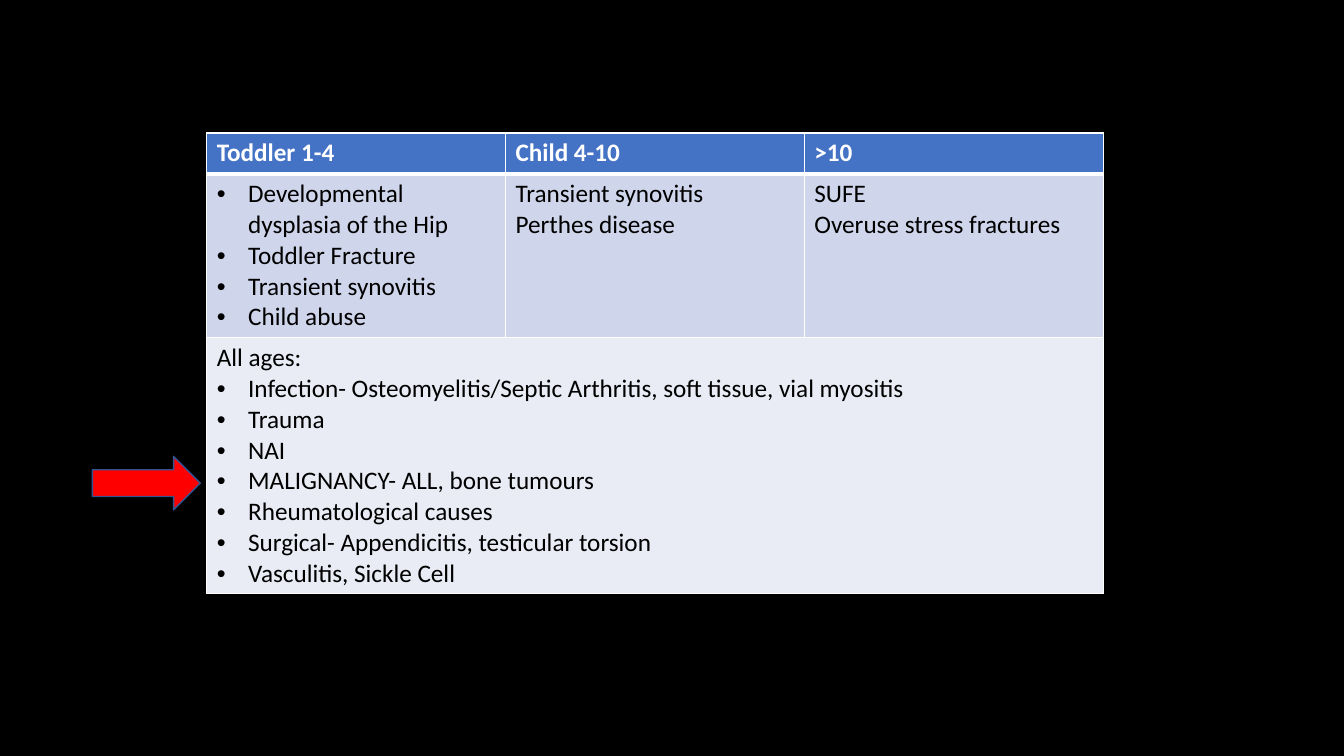
from lxml import etree
from pptx import Presentation
from pptx.dml.color import RGBColor
from pptx.enum.shapes import MSO_SHAPE
from pptx.oxml.ns import qn
from pptx.util import Cm, Pt

RIGHT_ARROW = MSO_SHAPE.RIGHT_ARROW

# Content: lines starting with the bullet mark become bulleted paragraphs
BULLET = "•"
AGE_GROUPS = ["Toddler 1-4", "Child 4-10", ">10"]
CAUSES_BY_AGE = [
    ["•Developmental dysplasia of the Hip", "•Toddler Fracture",
     "•Transient synovitis", "•Child abuse"],
    ["Transient synovitis", "Perthes disease"],
    ["SUFE", "Overuse stress fractures"],
]
CAUSES_ALL_AGES = [
    "All ages:",
    "•Infection- Osteomyelitis/Septic Arthritis, soft tissue, vial myositis",
    "•Trauma",
    "•NAI",
    "•MALIGNANCY- ALL, bone tumours",
    "•Rheumatological causes",
    "•Surgical- Appendicitis, testicular torsion",
    "•Vasculitis, Sickle Cell",
]

# Layout and colours
TABLE_LEFT, TABLE_TOP = 5.21, 3.35
COLUMN_WIDTH = 7.53
ROW_HEIGHTS = [1.03, 4.1, 6.4]
ROW_FILLS = ["4472C4", "CFD5EA", "E9EBF5"]
THIN, THICK = 1, 3
BULLET_INDENT = Cm(0.79)
WHITE, BLACK, RED, ARROW_EDGE = "FFFFFF", "000000", "FF0000", "325491"


def rgb(value):
    return RGBColor.from_string(value)


def paint(fill, color):
    fill.solid()
    fill.fore_color.rgb = rgb(color)


def write(frame, lines, size=18, font="Calibri", color=BLACK, bold=False):
    for index, line in enumerate(lines):
        paragraph = frame.add_paragraph() if index else frame.paragraphs[0]
        if line.startswith(BULLET):
            properties = paragraph._p.get_or_add_pPr()
            properties.set("marL", str(BULLET_INDENT))
            properties.set("indent", str(-BULLET_INDENT))
            etree.SubElement(properties, qn("a:buFont"), typeface="Arial")
            etree.SubElement(properties, qn("a:buChar"), char=BULLET)
        run = paragraph.add_run()
        run.text = line.removeprefix(BULLET)
        run.font.size = Pt(size)
        run.font.name = font
        run.font.bold = bold
        run.font.color.rgb = rgb(color)


def set_borders(cell, **widths):
    properties = cell._tc.get_or_add_tcPr()
    for side in "LRTB":
        width = Pt(widths.get(side, THIN))
        border = etree.SubElement(properties, qn(f"a:ln{side}"), w=str(width))
        solid = etree.SubElement(border, qn("a:solidFill"))
        etree.SubElement(solid, qn("a:srgbClr"), val=WHITE)


prs = Presentation()
prs.slide_width, prs.slide_height = Cm(33.87), Cm(19.05)
slide = prs.slides.add_slide(prs.slide_layouts[6])
paint(slide.background.fill, BLACK)

# Table of causes by age group
causes = slide.shapes.add_table(
    len(ROW_HEIGHTS), len(AGE_GROUPS), Cm(TABLE_LEFT), Cm(TABLE_TOP),
    Cm(COLUMN_WIDTH * len(AGE_GROUPS)), Cm(sum(ROW_HEIGHTS))).table
for column in causes.columns:
    column.width = Cm(COLUMN_WIDTH)

header_rule = [{"B": THICK}, {"T": THICK}, {}]
for row_index, height in enumerate(ROW_HEIGHTS):
    causes.rows[row_index].height = Cm(height)
    for cell in causes.rows[row_index].cells:
        set_borders(cell, **header_rule[row_index])
        paint(cell.fill, ROW_FILLS[row_index])

for index, (age_group, age_causes) in enumerate(zip(AGE_GROUPS, CAUSES_BY_AGE)):
    write(causes.cell(0, index).text_frame, [age_group], color=WHITE, bold=True)
    write(causes.cell(1, index).text_frame, age_causes)

all_ages = causes.cell(2, 0)
all_ages.merge(causes.cell(2, len(AGE_GROUPS) - 1))
write(all_ages.text_frame, CAUSES_ALL_AGES)

# Arrow pointing at malignancy
malignancy_arrow = slide.shapes.add_shape(
    RIGHT_ARROW, Cm(2.33), Cm(11.5), Cm(2.72), Cm(1.35))
malignancy_arrow.shadow.inherit = False
paint(malignancy_arrow.fill, RED)
malignancy_arrow.line.color.rgb = rgb(ARROW_EDGE)
malignancy_arrow.line.width = Pt(1)

prs.save("out.pptx")
